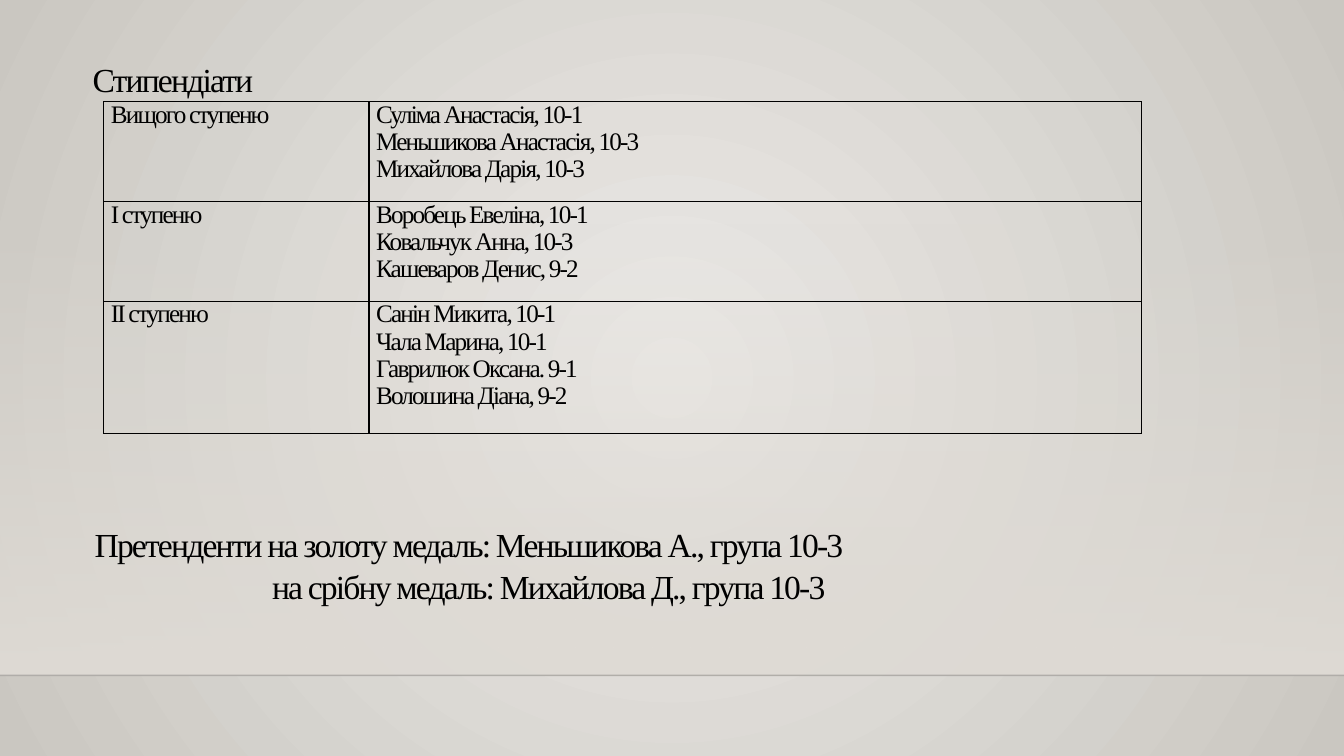
from lxml.etree import SubElement
from pptx import Presentation
from pptx.dml.color import RGBColor
from pptx.enum.shapes import MSO_CONNECTOR, MSO_SHAPE
from pptx.enum.text import PP_ALIGN
from pptx.oxml.ns import qn
from pptx.util import Inches, Pt

WIDTH, HEIGHT = 13.33, 7.5
FLOOR = 6.7
FONT = "Times New Roman"
COLORS = {"center": "ECEAE7", "edge": "CAC7C1", "wall": "DFDBD5",
          "floor_line": "000001", "ink": "000000"}

HEADING = "Стипендіати"
SCHOLARS = [
    ("Вищого ступеню", ["Суліма Анастасія, 10-1", "Меньшикова Анастасія, 10-3",
                        "Михайлова Дарія, 10-3"]),
    ("І ступеню", ["Воробець Евеліна, 10-1", "Ковальчук Анна, 10-3",
                   "Кашеваров Денис, 9-2"]),
    ("ІІ ступеню", ["Санін Микита, 10-1", "Чала Марина, 10-1",
                    "Гаврилюк Оксана. 9-1", "Волошина Діана, 9-2"]),
]
COLUMN_WIDTHS = [2.63, 7.66]
ROW_HEIGHTS = [0.99, 0.99, 1.31]
MEDALS = ["Претенденти на золоту медаль: Меньшикова А., група 10-3",
          "на срібну медаль: Михайлова Д., група 10-3"]


def rgb(name):
    return RGBColor.from_string(COLORS[name])


def set_gradient(fill, first, last):
    """Give a fill two stops that run from its start to its end."""
    fill.gradient()
    for stop, name, position in zip(fill.gradient_stops, (first, last), (0, 1)):
        stop.color.rgb = rgb(name)
        stop.position = position


def set_opacity(color, percent):
    SubElement(color, qn("a:alpha"), val=str(percent * 1000))


def write_lines(text_frame, lines, size, spacing, alignment=PP_ALIGN.LEFT):
    """Write one tightly tracked paragraph for each line."""
    text_frame.word_wrap = True
    text_frame.text = "\n".join(lines)
    for paragraph in text_frame.paragraphs:
        paragraph.alignment = alignment
        paragraph.line_spacing = spacing
        for run in paragraph.runs:
            run.font.name = FONT
            run.font.size = Pt(size)
            run.font.color.rgb = rgb("ink")
            run._r.get_or_add_rPr().set("spc", "-130")


def indent(paragraph, inches):
    properties = paragraph._p.get_or_add_pPr()
    properties.set("marL", "0")
    properties.set("indent", str(Inches(inches)))


def add_backdrop(slide):
    """Paint the radial background, the fading wall and the floor line."""
    set_gradient(slide.background.fill, "center", "edge")
    gradient = slide.element.find(".//" + qn("a:gradFill"))
    gradient.remove(gradient.find(qn("a:lin")))
    radial = SubElement(gradient, qn("a:path"), path="circle")
    SubElement(radial, qn("a:fillToRect"),
               dict.fromkeys("ltrb", "50000"))

    wall_top = 2.21
    wall = slide.shapes.add_shape(MSO_SHAPE.RECTANGLE, 0, Inches(wall_top),
                                  Inches(WIDTH), Inches(FLOOR - wall_top))
    wall.shadow.inherit = False
    wall.line.fill.background()
    set_gradient(wall.fill, "wall", "wall")
    wall.fill.gradient_angle = 270
    set_opacity(wall._element.find(".//" + qn("a:srgbClr")), 0)

    floor_line = slide.shapes.add_connector(
        MSO_CONNECTOR.STRAIGHT, 0, Inches(FLOOR), Inches(WIDTH), Inches(FLOOR))
    floor_line.line.color.rgb = rgb("floor_line")
    floor_line.line.width = Pt(1)
    properties = floor_line._element.spPr
    set_opacity(properties.find(".//" + qn("a:srgbClr")), 20)
    SubElement(properties, qn("a:effectLst"))


def add_text(slide, box, lines, spacing, alignment=PP_ALIGN.LEFT):
    text_box = slide.shapes.add_textbox(*map(Inches, box))
    write_lines(text_box.text_frame, lines, 24, spacing, alignment)
    return text_box.text_frame.paragraphs


def add_borders(cell):
    properties = cell._tc.get_or_add_tcPr()
    for index, side in enumerate(("lnL", "lnR", "lnT", "lnB")):
        border = properties.makeelement(qn("a:" + side), {"w": str(Pt(1))})
        fill = SubElement(border, qn("a:solidFill"))
        SubElement(fill, qn("a:srgbClr"), val=COLORS["ink"])
        properties.insert(index, border)


def add_scholar_table(slide, left, top):
    table = slide.shapes.add_table(
        len(SCHOLARS), len(COLUMN_WIDTHS), Inches(left), Inches(top),
        Inches(sum(COLUMN_WIDTHS)), Inches(sum(ROW_HEIGHTS))).table
    table.first_row = table.horz_banding = False
    for column, width in zip(table.columns, COLUMN_WIDTHS):
        column.width = Inches(width)
    for row, height, (degree, names) in zip(table.rows, ROW_HEIGHTS, SCHOLARS):
        row.height = Inches(height)
        for cell, lines in zip(row.cells, ([degree], names)):
            cell.margin_left = cell.margin_right = Inches(0.07)
            cell.margin_top = cell.margin_bottom = 0
            cell.fill.background()
            add_borders(cell)
            write_lines(cell.text_frame, lines, 18, 0.97, PP_ALIGN.JUSTIFY)


def build_scholars_slide(presentation):
    slide = presentation.slides.add_slide(presentation.slide_layouts[6])
    add_backdrop(slide)
    heading, = add_text(slide, (0.52, 0.52, 10.79, 0.91), [HEADING], 1.04,
                        PP_ALIGN.JUSTIFY)
    indent(heading, 0.3)
    gold, silver = add_text(slide, (0.84, 5.13, 10.16, 0.91), MEDALS, 1.04)
    indent(silver, 1.76)
    add_scholar_table(slide, 1.03, 1.01)


def main():
    presentation = Presentation()
    presentation.slide_width = Inches(WIDTH)
    presentation.slide_height = Inches(HEIGHT)
    build_scholars_slide(presentation)
    presentation.save("out.pptx")


if __name__ == "__main__":
    main()
